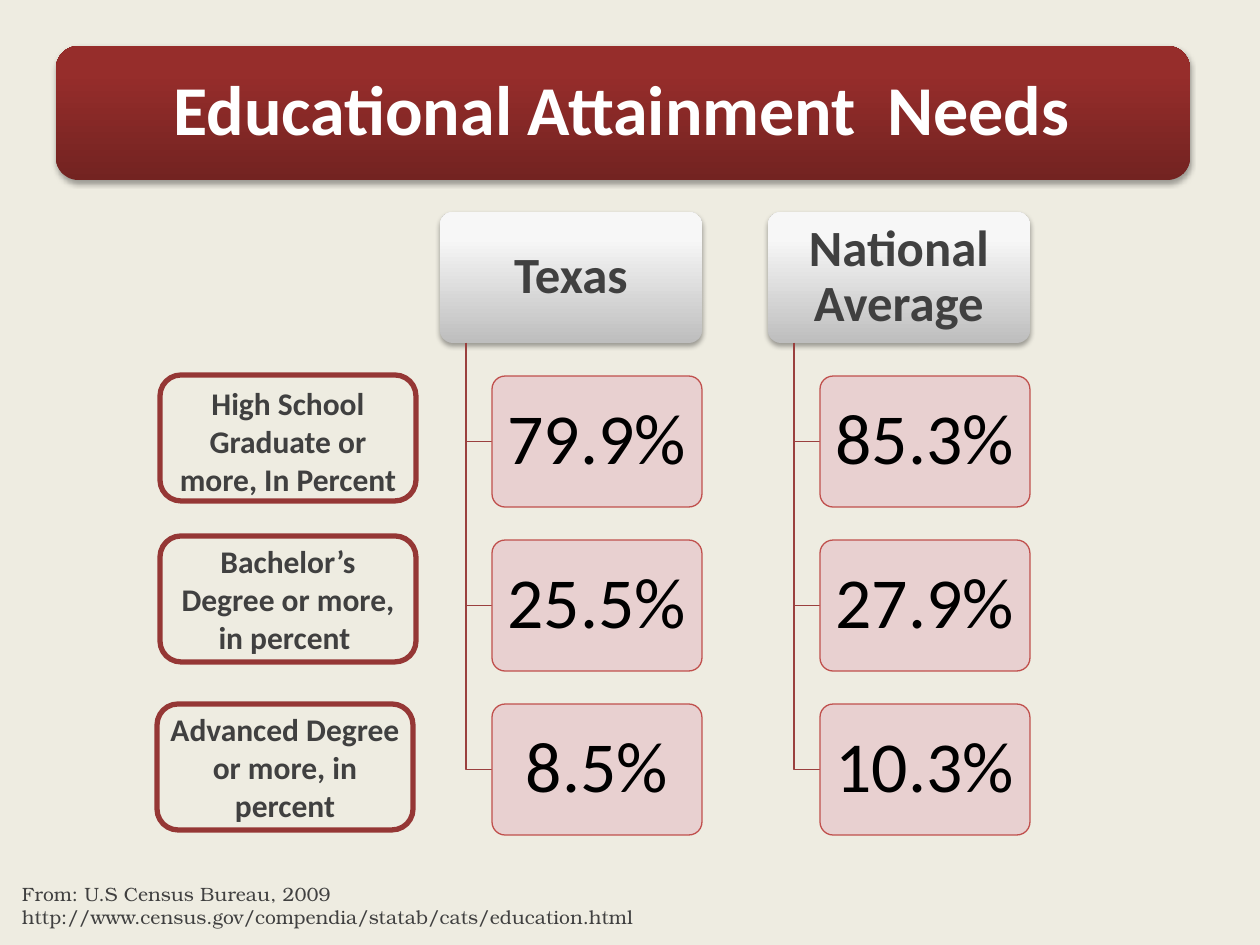
from copy import deepcopy

from lxml import etree
from pptx import Presentation
from pptx.dml.color import RGBColor
from pptx.enum.shapes import MSO_SHAPE
from pptx.enum.text import MSO_ANCHOR, MSO_AUTO_SIZE, PP_ALIGN
from pptx.oxml.ns import qn
from pptx.util import Pt

ROUNDED = MSO_SHAPE.ROUNDED_RECTANGLE
MIDDLE, TOP = MSO_ANCHOR.MIDDLE, MSO_ANCHOR.TOP
CENTER, LEFT = PP_ALIGN.CENTER, PP_ALIGN.LEFT
NO_FIT = MSO_AUTO_SIZE.NONE
EMU_PER_PX = 914400 / 126
TITLE_ONLY = 5

SILVER = [(0, "BEBEBE"), (0.8, "F7F7F7"), (1, "F8F8F8")]
CRIMSON = [(0, "732321"), (0.8, "962D2B"), (1, "992C29")]
HEADING = {"size": Pt(29), "name": "Calibri", "bold": True}
VALUE = {"size": Pt(41), "name": "Calibri", "bold": False}
LABEL = {"size": Pt(18), "name": "Calibri", "bold": True}
TITLE = {"size": Pt(40), "name": "Calibri", "bold": True}
SOURCE = {"size": Pt(11), "name": "TeX Gyre Bonum", "bold": False}

COLUMNS = [
    ("Texas", ["79.9%", "25.5%", "8.5%"]),
    ("National Average", ["85.3%", "27.9%", "10.3%"]),
]
LABELS = [
    (160, 375, 3, "High School Graduate or more, In Percent"),
    (160, 536, 0, "Bachelor’s Degree or more, in percent "),
    (157, 704, 0, "Advanced Degree or more, in percent"),
]
CITATION = [
    "From: U.S Census Bureau, 2009",
    "http://www.census.gov/compendia/statab/cats/education.html",
]


def px(length):
    """Turn pixels into EMU."""
    return round(length * EMU_PER_PX)


def color(hex_code):
    """Turn a hex string into a colour."""
    return RGBColor.from_string(hex_code)


def write(shape, lines, font, ink, insets=(6, 6), anchor=MIDDLE, align=CENTER, spacing=0.9):
    """Fill a shape's text frame with formatted paragraphs."""
    frame = shape.text_frame
    across, down = map(px, insets)
    frame_format = {
        "word_wrap": True, "auto_size": NO_FIT, "vertical_anchor": anchor,
        "margin_left": across, "margin_right": across,
        "margin_top": down, "margin_bottom": down,
    }
    for key, value in frame_format.items():
        setattr(frame, key, value)
    frame.text = "\n".join(lines)
    for paragraph in frame.paragraphs:
        paragraph.alignment = align
        paragraph.line_spacing = spacing
        for run in paragraph.runs:
            for key, value in font.items():
                setattr(run.font, key, value)
            run.font.color.rgb = color(ink)


def add_card(slide, box, corner, fill=None, line=None, weight=0.75):
    """Add a flat rounded rectangle with optional fill and outline."""
    card = slide.shapes.add_shape(ROUNDED, *map(px, box))
    card.shadow.inherit = False
    card.adjustments[0] = corner
    if fill:
        card.fill.solid()
        card.fill.fore_color.rgb = color(fill)
    else:
        card.fill.background()
    if line:
        card.line.color.rgb = color(line)
        card.line.width = Pt(weight)
    else:
        card.line.fill.background()
    return card


def add_raised_card(slide, box, corner, shades):
    """Add a rounded rectangle with a vertical gradient and a soft shadow."""
    card = add_card(slide, box, corner)
    card.fill.gradient()
    card.fill.gradient_angle = 90
    properties = card._element.spPr
    stop_list = properties.find(".//" + qn("a:gsLst"))
    stop_list.append(deepcopy(stop_list[-1]))
    for stop, (position, shade) in zip(card.fill.gradient_stops, shades):
        stop.position = position
        stop.color.rgb = color(shade)
    shadow = etree.SubElement(
        properties.find(qn("a:effectLst")), qn("a:outerShdw"),
        blurRad=str(Pt(3.1)), dist=str(Pt(1.8)), dir="5400000", rotWithShape="0")
    black = etree.SubElement(shadow, qn("a:srgbClr"), val="000000")
    etree.SubElement(black, qn("a:alpha"), val="35000")
    return card


def add_branch(slide, x, top, bottom, reach):
    """Add an elbow that drops from a heading and turns to a value."""
    builder = slide.shapes.build_freeform(px(x), px(top))
    builder.add_line_segments(
        [(px(x), px(bottom)), (px(x + reach), px(bottom))], close=False)
    branch = builder.convert_to_shape()
    branch.shadow.inherit = False
    branch.fill.background()
    branch.line.color.rgb = color("9A403E")
    branch.line.width = Pt(0.75)


def add_banner(slide, box):
    """Place the title over a crimson banner."""
    left, top, width, height = box
    add_raised_card(slide, box, 0.1667, CRIMSON)
    title = slide.shapes.title
    place = {"left": left + 13, "top": top + 6, "width": width - 13, "height": height - 13}
    for key, value in place.items():
        setattr(title, key, px(value))
    write(title, ["Educational Attainment  Needs "], TITLE, "FFFFFF", (21, 21))
    slide.shapes._spTree.append(title._element)


def add_column(slide, box, heading, values):
    """Add a heading card with its values branching below."""
    left, top, width, height = box
    indent, step = width // 5, height + 33
    header = add_raised_card(slide, box, 0.1, SILVER)
    write(header, [heading], HEADING, "404040")
    for row, value in enumerate(values, 1):
        value_top = top + row * step
        add_branch(slide, left + indent / 2, top + height,
                   value_top + height / 2, indent / 2)
        card = add_card(slide, (left + indent, value_top, width - indent, height),
                        0.1, "E8D0D0", "C0504D")
        write(card, [value], VALUE, "000000")


def add_label(slide, box, text, drop):
    """Add an outlined row label."""
    frame = add_card(slide, box, 0.1667, line="953735", weight=3)
    write(frame, [text], LABEL, "404040", (6, drop), TOP, spacing=1)


def add_citation(slide, box):
    """Add the source lines."""
    citation = slide.shapes.add_textbox(*map(px, box))
    write(citation, CITATION, SOURCE, "404040", (13, 6), TOP, LEFT, 1)


def main():
    """Build the slide and save it."""
    deck = Presentation()
    deck.slide_width, deck.slide_height = px(1260), px(945)
    slide = deck.slides.add_slide(deck.slide_layouts[TITLE_ONLY])
    slide.background.fill.solid()
    slide.background.fill.fore_color.rgb = color("EEECE1")
    for index, (heading, values) in enumerate(COLUMNS):
        add_column(slide, (440 + 328 * index, 212, 262, 131), heading, values)
    add_banner(slide, (56, 46, 1134, 134))
    for left, top, drop, text in LABELS:
        add_label(slide, (left, top, 256, 126), text, drop)
    add_citation(slide, (9, 876, 656, 59))
    deck.save("out.pptx")


if __name__ == "__main__":
    main()
